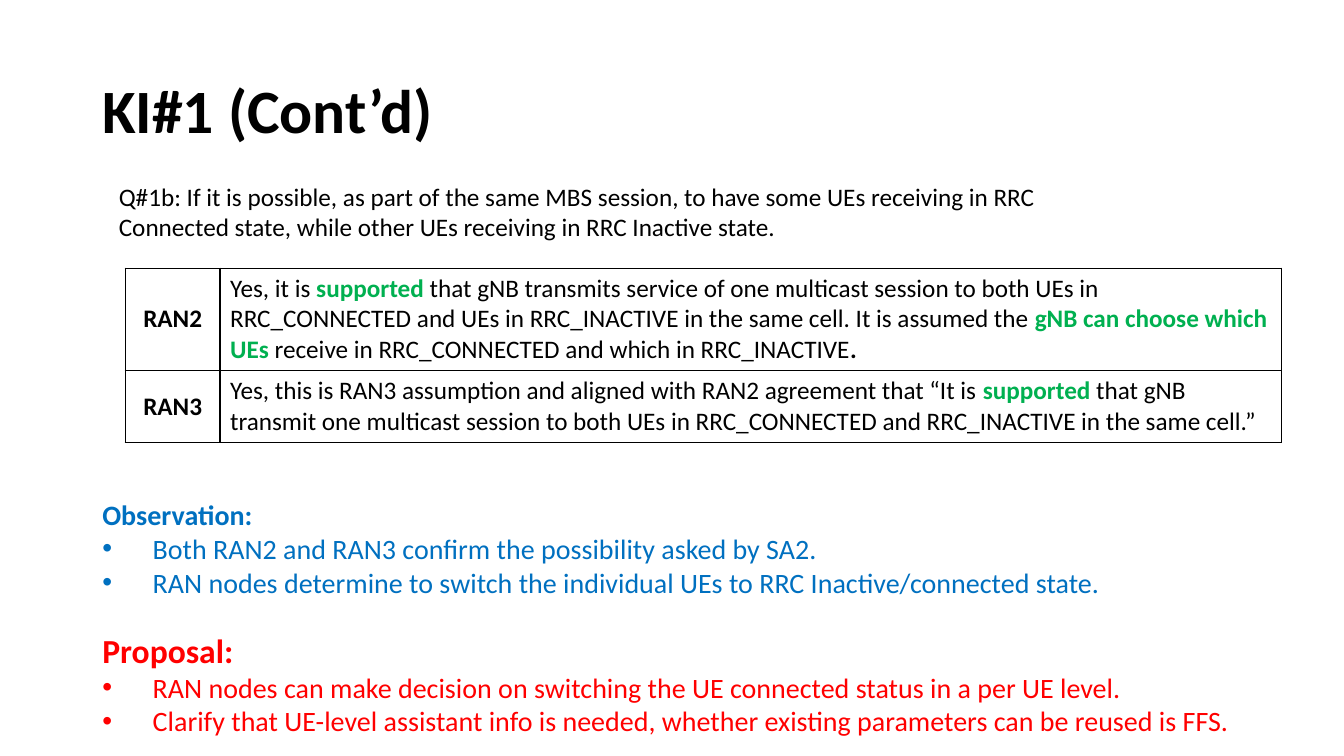
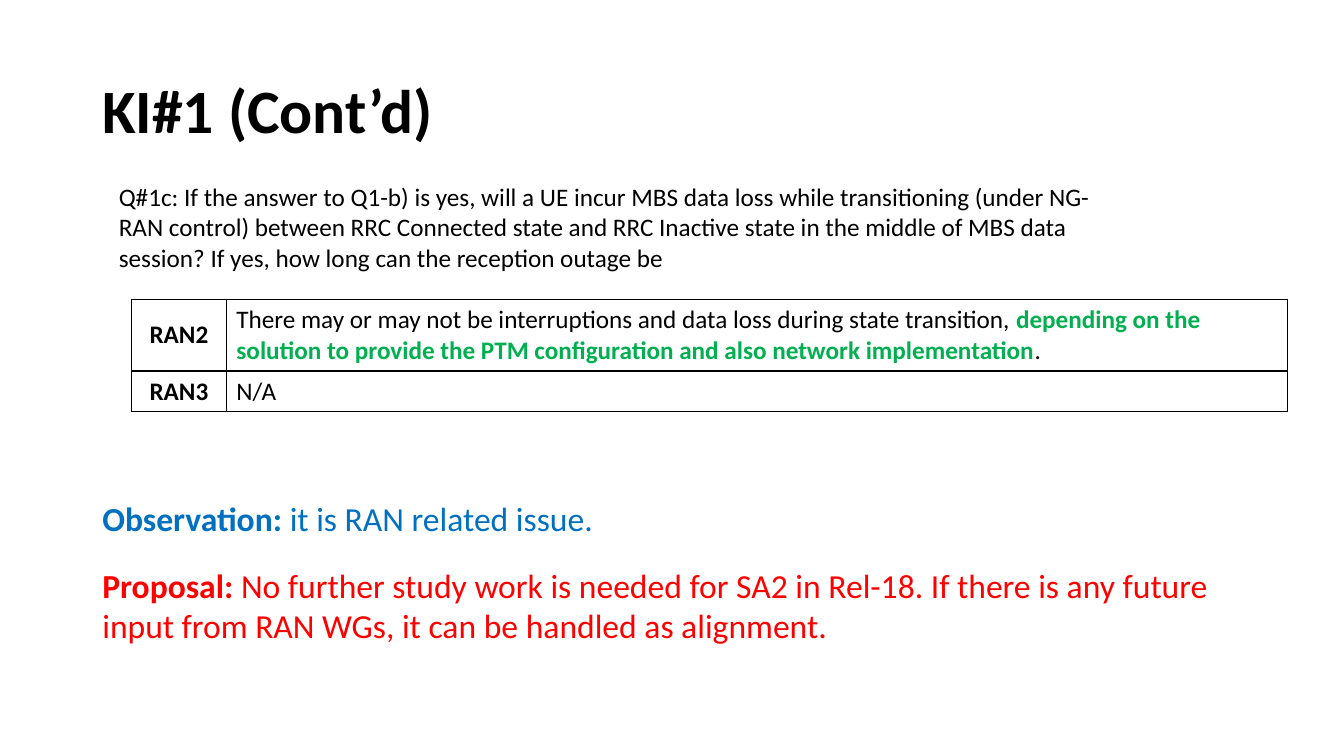
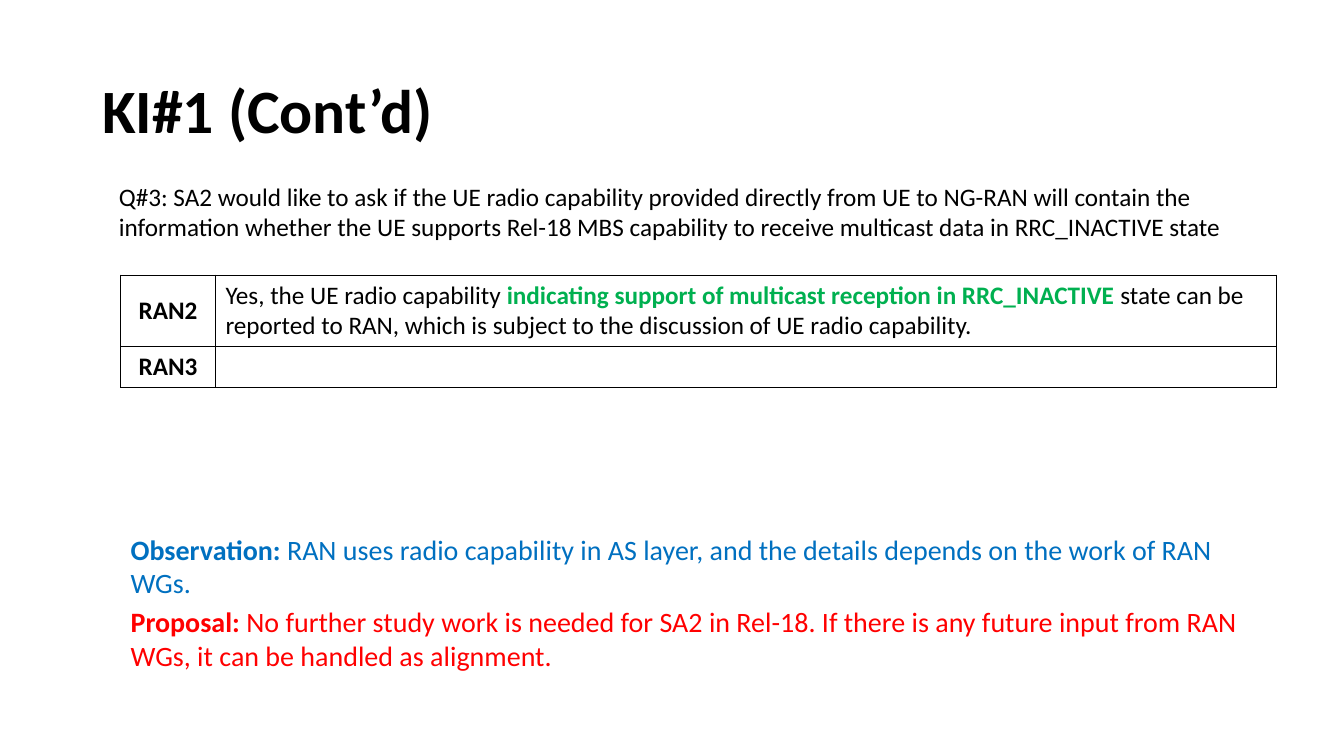
from dataclasses import dataclass

from lxml.etree import SubElement
from pptx import Presentation
from pptx.dml.color import RGBColor
from pptx.enum.text import MSO_ANCHOR, PP_ALIGN
from pptx.oxml import parse_xml
from pptx.oxml.ns import nsdecls, qn
from pptx.util import Pt


@dataclass(frozen=True)
class Theme:
    font: str = "Calibri"
    ink: str = "000000"
    highlight: str = "00B050"
    observation: str = "0070C0"
    proposal: str = "FF0000"
    title_size: int = 44
    lead_size: int = 24
    point_size: int = 20
    body_size: int = 18
    line_height: float = 22
    cell_padding: float = 7.2
    bullet_indent: float = 36
    border: float = 1


@dataclass(frozen=True)
class Box:
    left: float
    top: float
    width: float
    height: float

    def lengths(self):
        return Pt(self.left), Pt(self.top), Pt(self.width), Pt(self.height)


THEME = Theme()
TITLE_BOX = Box(66, 28.8, 828, 104.4)
GROUPS = ("RAN2", "RAN3")
COLUMN_WIDTHS = (67.7, 758.1)
NO_FURTHER_STUDY = (
    "No further study work is needed for SA2 in Rel-18. If there is any future "
    "input from RAN WGs, it can be handled as alignment."
)


# Text helpers
def add_run(paragraph, text, size, color=THEME.ink, bold=False):
    run = paragraph.add_run()
    run.text = text
    run.font.name = THEME.font
    run.font.size = Pt(size)
    run.font.bold = bold
    run.font.color.rgb = RGBColor.from_string(color)


def add_text_frame(slide, box, anchor=MSO_ANCHOR.TOP):
    text_frame = slide.shapes.add_textbox(*box.lengths()).text_frame
    text_frame.word_wrap = True
    text_frame.vertical_anchor = anchor
    return text_frame


def set_bullet(paragraph):
    properties = paragraph._p.get_or_add_pPr()
    properties.set("marL", str(Pt(THEME.bullet_indent)))
    properties.set("indent", str(-Pt(THEME.bullet_indent)))
    SubElement(properties, qn("a:buFont"), typeface="Arial")
    SubElement(properties, qn("a:buChar"), char="•")


# Slide regions
def add_title(slide, box):
    paragraph = add_text_frame(slide, box, MSO_ANCHOR.MIDDLE).paragraphs[0]
    paragraph.line_spacing = 0.9
    add_run(paragraph, "KI#1 (Cont’d)", THEME.title_size, bold=True)


def add_question(slide, box, text):
    paragraph = add_text_frame(slide, box).paragraphs[0]
    add_run(paragraph, text, THEME.body_size)


def style_cell(cell):
    cell.vertical_anchor = MSO_ANCHOR.MIDDLE
    cell.fill.background()
    properties = cell._tc.get_or_add_tcPr()
    for position, side in enumerate(("lnL", "lnR", "lnT", "lnB")):
        line = parse_xml(
            f'<a:{side} {nsdecls("a")} w="{Pt(THEME.border)}"><a:solidFill>'
            f'<a:srgbClr val="{THEME.ink}"/></a:solidFill></a:{side}>'
        )
        properties.insert(position, line)


def add_answers(slide, left, top, answers):
    """Each answer is (line count, runs); emphasised runs alternate with plain ones."""
    heights = [lines * THEME.line_height + THEME.cell_padding for lines, _ in answers]
    box = Box(left, top, sum(COLUMN_WIDTHS), sum(heights))
    frame = slide.shapes.add_table(len(answers), len(COLUMN_WIDTHS), *box.lengths())
    table = frame.table
    table.first_row = False
    table.horz_banding = False
    for column, width in zip(table.columns, COLUMN_WIDTHS):
        column.width = Pt(width)
    for row, height, group, (_, texts) in zip(table.rows, heights, GROUPS, answers):
        row.height = Pt(height)
        for cell in row.cells:
            style_cell(cell)
        label, answer = (cell.text_frame.paragraphs[0] for cell in row.cells)
        label.alignment = PP_ALIGN.CENTER
        add_run(label, group, THEME.body_size, bold=True)
        for index, text in enumerate(texts):
            emphasised = index % 2 == 1
            color = THEME.highlight if emphasised else THEME.ink
            add_run(answer, text, THEME.body_size, color, emphasised)


def add_remark(slide, box, color, heading, size, text="", points=()):
    text_frame = add_text_frame(slide, box)
    paragraph = text_frame.paragraphs[0]
    add_run(paragraph, heading, size, color, bold=True)
    if text:
        add_run(paragraph, text, size, color)
    for point in points:
        paragraph = text_frame.add_paragraph()
        set_bullet(paragraph)
        add_run(paragraph, point, THEME.point_size, color)


def add_question_slide(presentation, question_box, question, table_at, answers):
    slide = presentation.slides.add_slide(presentation.slide_layouts[6])
    add_title(slide, TITLE_BOX)
    add_question(slide, question_box, question)
    add_answers(slide, *table_at, answers)
    return slide


# Slides
def build_mixed_states(presentation):
    slide = add_question_slide(
        presentation,
        Box(77.8, 126, 739.4, 51),
        "Q#1b: If it is possible, as part of the same MBS session, to have some UEs "
        "receiving in RRC Connected state, while other UEs receiving in RRC Inactive state.",
        (89.5, 191.5),
        [
            (3, (
                "Yes, it is ",
                "supported",
                " that gNB transmits service of one multicast session to both UEs in "
                "RRC_CONNECTED and UEs in RRC_INACTIVE in the same cell. It is assumed the ",
                "gNB can choose which UEs",
                " receive in RRC_CONNECTED and which in RRC_INACTIVE",
            )),
            (2, (
                "Yes, this is RAN3 assumption and aligned with RAN2 agreement that “It is ",
                "supported",
                " that gNB transmit one multicast session to both UEs in RRC_CONNECTED "
                "and RRC_INACTIVE in the same cell.”",
            )),
        ],
    )
    # The closing full stop of the first answer is bold black
    table = slide.shapes[-1].table
    add_run(table.cell(0, 1).text_frame.paragraphs[0], ".", THEME.body_size, bold=True)
    add_remark(
        slide, Box(66, 352, 882, 104.4), THEME.observation, "Observation:", THEME.point_size,
        points=(
            "Both RAN2 and RAN3 confirm the possibility asked by SA2.",
            "RAN nodes determine to switch the individual UEs to RRC Inactive/connected state.",
        ),
    )
    add_remark(
        slide, Box(66, 446.4, 882, 85), THEME.proposal, "Proposal:", THEME.lead_size,
        points=(
            "RAN nodes can make decision on switching the UE connected status in a per UE level.",
            "Clarify that UE-level assistant info is needed, whether existing parameters "
            "can be reused is FFS.",
        ),
    )


def build_data_loss(presentation):
    slide = add_question_slide(
        presentation,
        Box(77.8, 126, 739.4, 72.7),
        "Q#1c: If the answer to Q1-b) is yes, will a UE incur MBS data loss while "
        "transitioning (under NG-RAN control) between RRC Connected state and RRC Inactive "
        "state in the middle of MBS data session? If yes, how long can the reception outage be",
        (94, 213.8),
        [
            (2, (
                "There may or may not be interruptions and data loss during state transition, ",
                "depending on the solution to provide the PTM configuration and also "
                "network implementation",
                ".",
            )),
            (1, ("N/A",)),
        ],
    )
    add_remark(slide, Box(66, 352, 882, 36), THEME.observation, "Observation: ",
               THEME.lead_size, "it is RAN related issue.")
    add_remark(slide, Box(66, 399.6, 854, 65.5), THEME.proposal, "Proposal: ",
               THEME.lead_size, NO_FURTHER_STUDY)


def build_radio_capability(presentation):
    slide = add_question_slide(
        presentation,
        Box(77.8, 126, 841.7, 51),
        "Q#3: SA2 would like to ask if the UE radio capability provided directly from UE to "
        "NG-RAN will contain the information whether the UE supports Rel-18 MBS capability "
        "to receive multicast data in RRC_INACTIVE state",
        (86.2, 196.5),
        [
            (2, (
                "Yes, the UE radio capability ",
                "indicating support of multicast reception in RRC_INACTIVE ",
                "state can be reported to RAN, which is subject to the discussion of "
                "UE radio capability.",
            )),
            (1, ()),
        ],
    )
    add_remark(
        slide, Box(86.2, 376.6, 825.8, 55.4), THEME.observation, "Observation: ",
        THEME.point_size,
        "RAN uses radio capability in AS layer, and the details depends on the work of RAN WGs.",
    )
    add_remark(slide, Box(86.2, 428.4, 849, 55.4), THEME.proposal, "Proposal: ",
               THEME.point_size, NO_FURTHER_STUDY)


def main():
    presentation = Presentation()
    presentation.slide_width = Pt(960)
    presentation.slide_height = Pt(540)
    build_mixed_states(presentation)
    build_data_loss(presentation)
    build_radio_capability(presentation)
    presentation.save("out.pptx")


if __name__ == "__main__":
    main()
